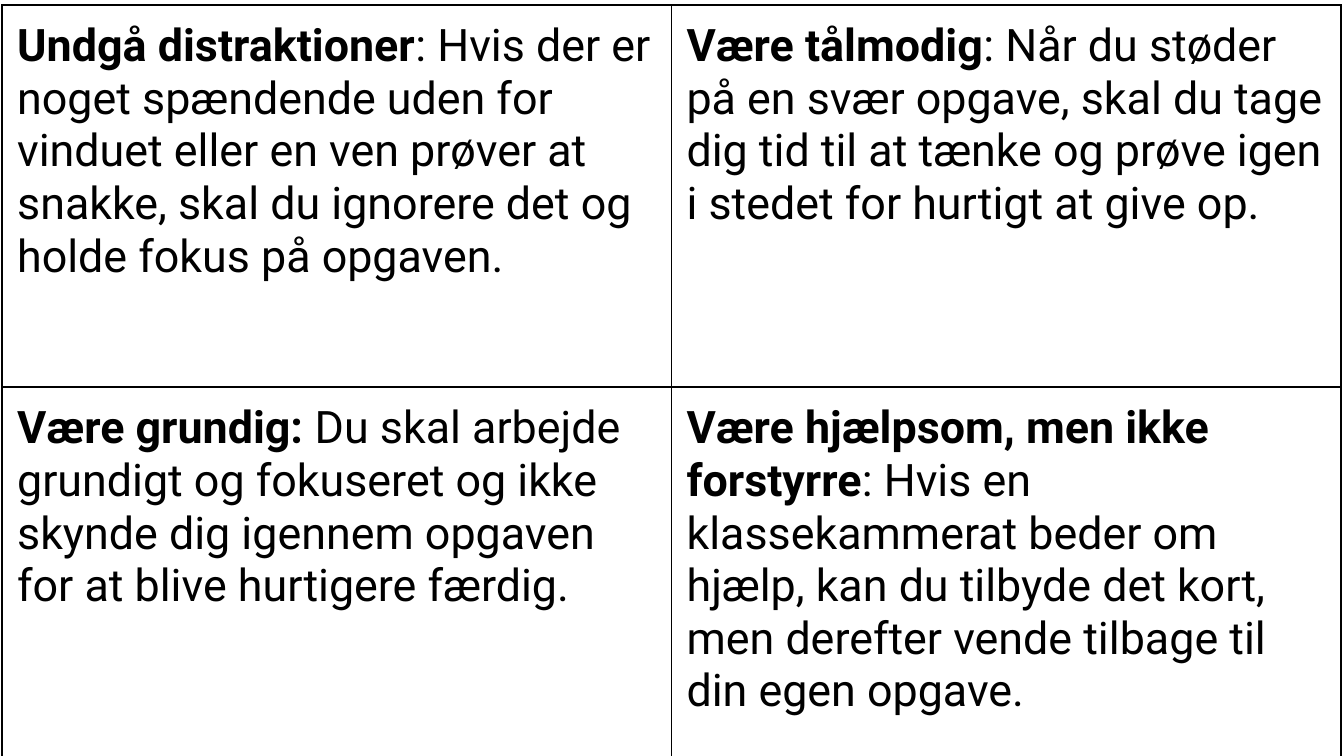
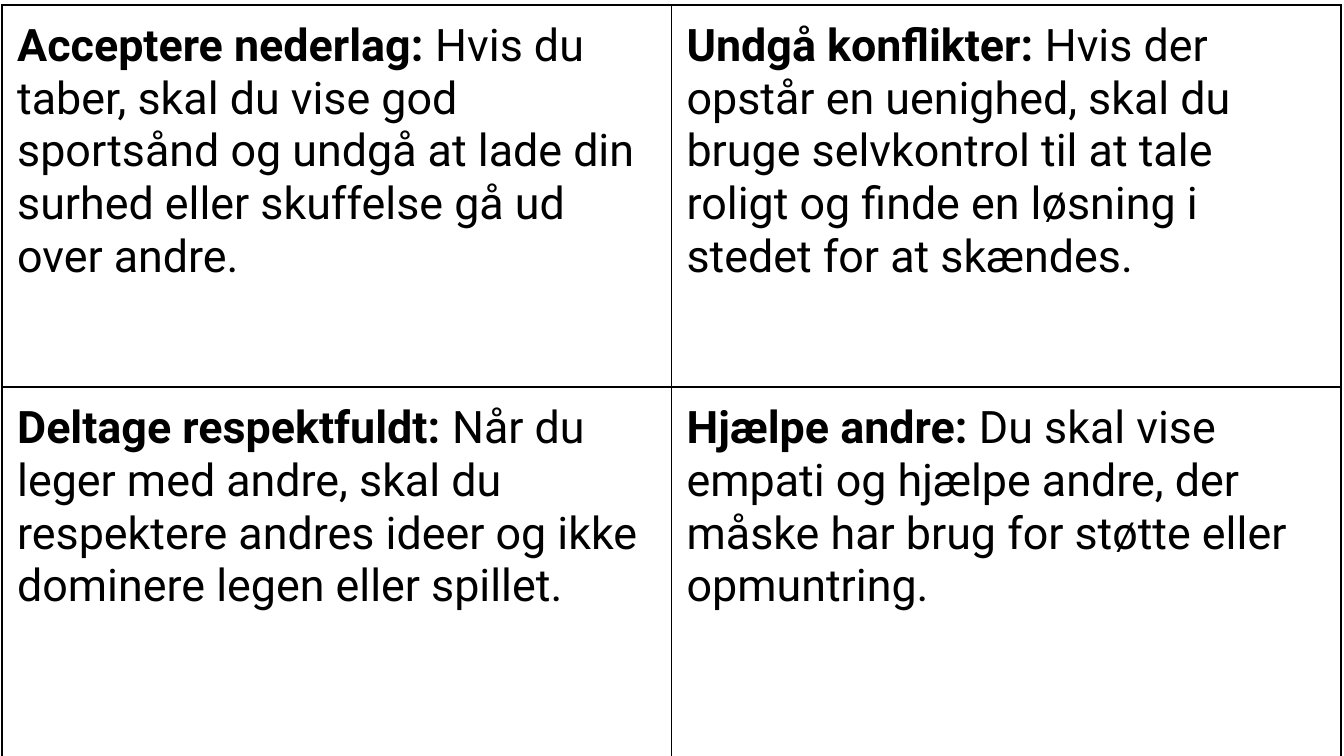
from lxml import etree
from pptx import Presentation
from pptx.dml.color import RGBColor
from pptx.oxml.ns import qn
from pptx.util import Inches, Pt

SLIDE_W, SLIDE_H = Inches(13.33), Inches(7.5)
BLACK = RGBColor(0x00, 0x00, 0x00)
FONT = "Roboto"
TEXT_SIZE = Pt(32)
BORDER_WIDTH = Pt(1)
CELL_MARGIN = Inches(0.15)
GRID_BOX = (Inches(0.02), Inches(0.05), Inches(13.28), Inches(7.58))

# Each slide is a grid of (bold heading, explanation) cards.
CARD_SLIDES = [
    [
        [("Undgå distraktioner",
          ": Hvis der er noget spændende uden for vinduet eller en ven prøver at "
          "snakke, skal du ignorere det og holde fokus på opgaven."),
         ("Være tålmodig",
          ": Når du støder på en svær opgave, skal du tage dig tid til at tænke "
          "og prøve igen i stedet for hurtigt at give op.")],
        [("Være grundig: ",
          "Du skal arbejde grundigt og fokuseret og ikke skynde dig igennem "
          "opgaven for at blive hurtigere færdig."),
         ("Være hjælpsom, men ikke forstyrre",
          ": Hvis en klassekammerat beder om hjælp, kan du tilbyde det kort, "
          "men derefter vende tilbage til din egen opgave.")],
    ],
    [
        [("Acceptere nederlag:",
          " Hvis du taber, skal du vise god sportsånd og undgå at lade din "
          "surhed eller skuffelse gå ud over andre."),
         ("Undgå konflikter:",
          " Hvis der opstår en uenighed, skal du bruge selvkontrol til at tale "
          "roligt og finde en løsning i stedet for at skændes.")],
        [("Deltage respektfuldt: ",
          "Når du leger med andre, skal du respektere andres ideer og ikke "
          "dominere legen eller spillet."),
         ("Hjælpe andre:",
          " Du skal vise empati og hjælpe andre, der måske har brug for støtte "
          "eller opmuntring.")],
    ],
]


def add_borders(cell):
    properties = cell._tc.get_or_add_tcPr()
    for side in ("a:lnL", "a:lnR", "a:lnT", "a:lnB"):
        border = etree.SubElement(properties, qn(side), w=str(BORDER_WIDTH))
        fill = etree.SubElement(border, qn("a:solidFill"))
        etree.SubElement(fill, qn("a:srgbClr"), val=str(BLACK))


def add_run(paragraph, text, bold):
    run = paragraph.add_run()
    run.text = text
    run.font.name = FONT
    run.font.size = TEXT_SIZE
    run.font.bold = bold
    run.font.color.rgb = BLACK


def fill_card(cell, heading, explanation):
    add_borders(cell)
    cell.fill.background()
    cell.margin_left = cell.margin_right = CELL_MARGIN
    cell.margin_top = cell.margin_bottom = CELL_MARGIN
    paragraph = cell.text_frame.paragraphs[0]
    add_run(paragraph, heading, True)
    add_run(paragraph, explanation, False)


def add_card_grid(slide, cards, box):
    """Place the cards in a table of equal cells that fills the box."""
    table = slide.shapes.add_table(len(cards), len(cards[0]), *box).table
    table.first_row = table.horz_banding = False
    for row, row_cards in enumerate(cards):
        for column, (heading, explanation) in enumerate(row_cards):
            fill_card(table.cell(row, column), heading, explanation)


def main():
    presentation = Presentation()
    presentation.slide_width, presentation.slide_height = SLIDE_W, SLIDE_H
    blank_layout = presentation.slide_layouts[6]
    for cards in CARD_SLIDES:
        add_card_grid(presentation.slides.add_slide(blank_layout), cards, GRID_BOX)
    presentation.save("out.pptx")


if __name__ == "__main__":
    main()
